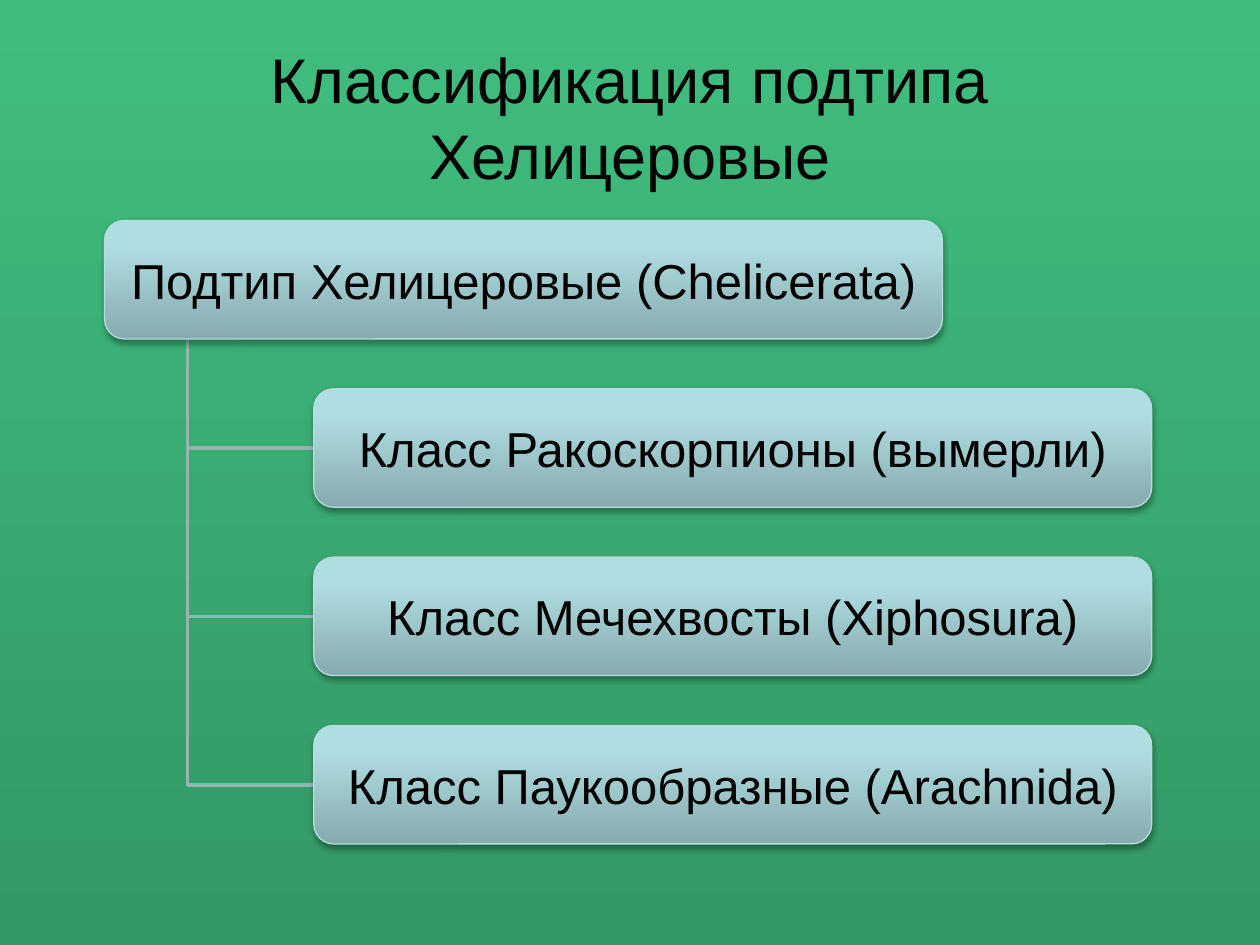
"""Build a slide with the classification tree of the subphylum Chelicerata."""
from copy import deepcopy
from dataclasses import dataclass

from lxml import etree
from pptx import Presentation
from pptx import util as u
from pptx.dml.color import RGBColor
from pptx.enum import shapes, text
from pptx.oxml.ns import qn

COLORS = {
    "text": "000000",
    "meadow": "3FBD7E",
    "forest": "339966",
    "branch": "96B3B6",
    "border": "B6DCDF",
    "box_low": "87ABAE",
    "box_mid": "AFDEE2",
    "box_high": "AFE0E4",
    "shadow": "000000",
}
BOX_WIDTH, BOX_HEIGHT = 6.65, 0.94
ROOT_LEFT, CLASS_LEFT = 0.83, 2.49
TOP, STEP = 1.75, 1.336
TRUNK = 1.49
CLASSES = (
    "Класс Ракоскорпионы (вымерли)",
    "Класс Мечехвосты (Xiphosura)",
    "Класс Паукообразные (Arachnida)",
)


@dataclass(frozen=True)
class Taxon:
    label: str
    left: float
    top: float

    @property
    def middle(self) -> float:
        return self.top + BOX_HEIGHT / 2


def color(name: str) -> RGBColor:
    return RGBColor.from_string(COLORS[name])


def paint_gradient(fill, element, stops: list[tuple[float, str]], angle: float) -> None:
    fill.gradient()
    fill.gradient_angle = angle
    stop_list = next(element.iter(qn("a:gsLst")))
    while len(stop_list) < len(stops):
        stop_list.append(deepcopy(stop_list[-1]))
    for stop, (position, name) in zip(fill.gradient_stops, stops):
        stop.position = position
        stop.color.rgb = color(name)


def write(frame, label: str, *, size: float, margin: float) -> None:
    frame.word_wrap = True
    frame.auto_size = text.MSO_AUTO_SIZE.NONE
    frame.vertical_anchor = text.MSO_ANCHOR.MIDDLE
    frame.margin_left = frame.margin_right = u.Inches(margin)
    frame.margin_top = frame.margin_bottom = u.Inches(margin)
    para = frame.paragraphs[0]
    para.alignment = text.PP_ALIGN.CENTER
    span = para.add_run()
    span.text = label
    span.font.name = "Arial"
    span.font.size = u.Pt(size)
    span.font.color.rgb = color("text")


def add_shadow(shape) -> None:
    shape.shadow.inherit = False
    effects = shape.element.spPr.find(qn("a:effectLst"))
    shadow = etree.SubElement(
        effects, qn("a:outerShdw"), blurRad=str(u.Pt(3.1)), dist=str(u.Pt(1.8)),
        dir="5400000", rotWithShape="0",
    )
    tint = etree.SubElement(shadow, qn("a:srgbClr"), val=COLORS["shadow"])
    etree.SubElement(tint, qn("a:alpha"), val="35000")


def draw_branch(page, root: Taxon, child: Taxon) -> None:
    builder = page.shapes.build_freeform(
        u.Inches(TRUNK), u.Inches(root.top + BOX_HEIGHT)
    )
    corners = [(TRUNK, child.middle), (child.left, child.middle)]
    builder.add_line_segments(
        [(u.Inches(x), u.Inches(y)) for x, y in corners], close=False
    )
    branch = builder.convert_to_shape()
    branch.fill.background()
    branch.line.color.rgb = color("branch")
    branch.line.width = u.Pt(2)
    branch.shadow.inherit = False


def draw_taxon(page, taxon: Taxon) -> None:
    box = page.shapes.add_shape(
        shapes.MSO_SHAPE.ROUNDED_RECTANGLE,
        u.Inches(taxon.left), u.Inches(taxon.top),
        u.Inches(BOX_WIDTH), u.Inches(BOX_HEIGHT),
    )
    stops = [(0, "box_low"), (0.8, "box_mid"), (1, "box_high")]
    paint_gradient(box.fill, box.element, stops, angle=90)
    box.line.color.rgb = color("border")
    box.line.width = u.Pt(0.75)
    add_shadow(box)
    write(box.text_frame, taxon.label, size=28, margin=0.02)


def main() -> None:
    deck = Presentation()
    deck.slide_width, deck.slide_height = u.Inches(10), u.Inches(7.5)
    page = deck.slides.add_slide(deck.slide_layouts[5])
    stops = [(0, "meadow"), (1, "forest")]
    paint_gradient(page.background.fill, page.element, stops, angle=270)

    title = page.shapes.title
    title.left, title.top = u.Inches(0.5), u.Inches(0.3)
    title.width, title.height = u.Inches(9), u.Inches(1.25)
    write(title.text_frame, "Классификация подтипа Хелицеровые", size=36, margin=0.1)

    root = Taxon("Подтип Хелицеровые (Chelicerata)", ROOT_LEFT, TOP)
    children = [
        Taxon(label, CLASS_LEFT, TOP + row * STEP)
        for row, label in enumerate(CLASSES, start=1)
    ]
    for child in reversed(children):
        draw_branch(page, root, child)
    for taxon in (root, *children):
        draw_taxon(page, taxon)
    deck.save("out.pptx")


if __name__ == "__main__":
    main()
